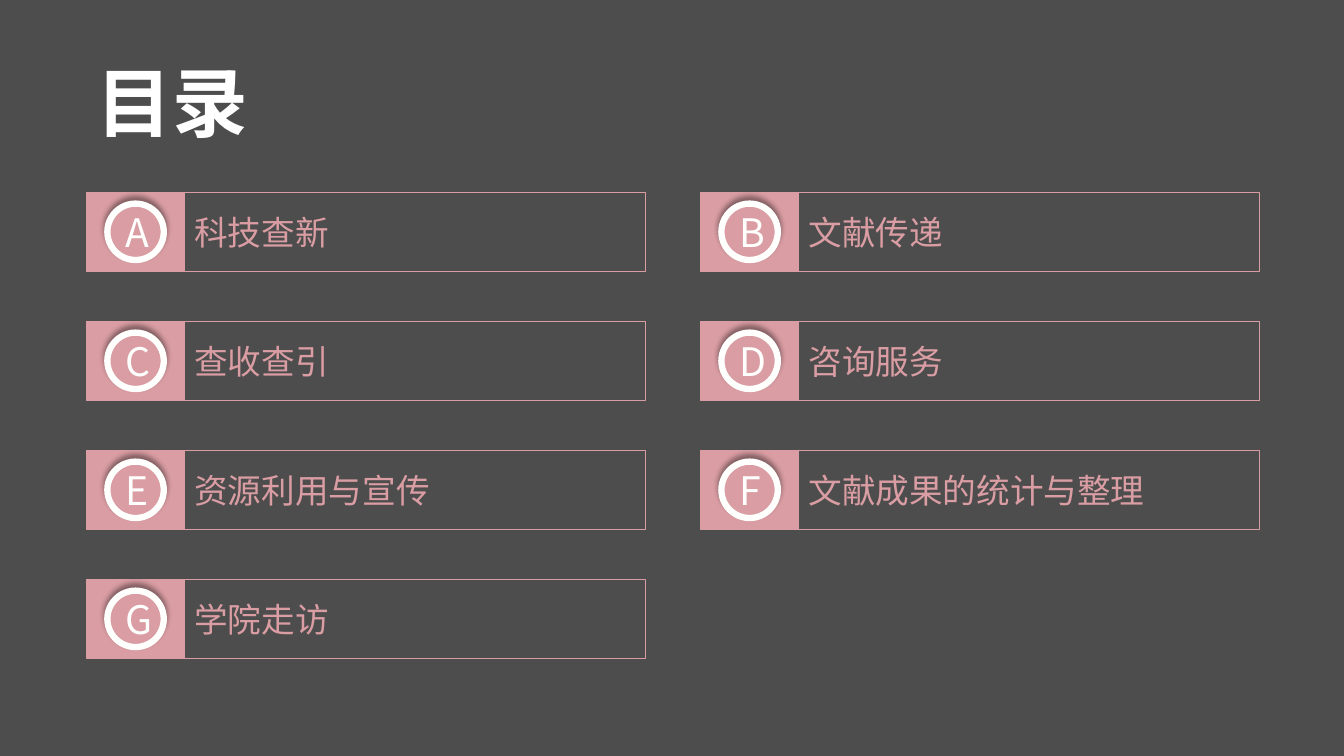
"""Build a contents slide with lettered entries on a two-column grid."""
from dataclasses import dataclass

from lxml import etree
from pptx import Presentation
from pptx.dml.color import RGBColor
from pptx.enum.shapes import MSO_SHAPE
from pptx.enum.text import MSO_ANCHOR, MSO_AUTO_SIZE, PP_ALIGN
from pptx.oxml.ns import qn
from pptx.util import Inches, Pt

RECTANGLE, OVAL = MSO_SHAPE.RECTANGLE, MSO_SHAPE.OVAL
LEFT, CENTER, JUSTIFY = PP_ALIGN.LEFT, PP_ALIGN.CENTER, PP_ALIGN.JUSTIFY
TOP, MIDDLE = MSO_ANCHOR.TOP, MSO_ANCHOR.MIDDLE
GROW = MSO_AUTO_SIZE.SHAPE_TO_FIT_TEXT


@dataclass(frozen=True)
class Theme:
    """Colours, font and type sizes in points."""
    background: str = "4D4D4D"
    pink: str = "D99DA3"
    ring: str = "FFFFFE"
    title: str = "FFFFFF"
    shadow: str = "000000"
    font: str = "Noto Sans CJK SC"
    title_size: int = 54
    letter_size: int = 28
    entry_size: int = 24
    thin_line: float = 0.5
    ring_line: float = 4.5


@dataclass(frozen=True)
class Grid:
    """Slide and entry measures in inches."""
    width: float = 13.33
    height: float = 7.5
    left: float = 0.86
    top: float = 1.91
    column_step: float = 6.09
    row_step: float = 1.28
    columns: int = 2
    tile: float = 0.97
    label: float = 4.57
    row: float = 0.78
    badge: float = 0.56

    def cell(self, index):
        """Return the left and top of an entry."""
        row, column = divmod(index, self.columns)
        return self.left + column * self.column_step, self.top + row * self.row_step


THEME = Theme()
GRID = Grid()
ENTRIES = ("科技查新", "文献传递", "查收查引", "咨询服务",
           "资源利用与宣传", "文献成果的统计与整理", "学院走访")


def write_text(box, text, *, size, color, bold=False, align=LEFT, anchor=MIDDLE):
    """Write one formatted paragraph into a box."""
    frame = box.text_frame
    frame.word_wrap = True
    frame.vertical_anchor = anchor
    para = frame.paragraphs[0]
    para.alignment = align
    span = para.add_run()
    span.text = text
    span.font.name = THEME.font
    span.font.size = Pt(size)
    span.font.bold = bold
    span.font.color.rgb = RGBColor.from_string(color)
    latin = span.font._element.find(qn("a:latin"))
    east_asian = etree.Element(qn("a:ea"), typeface=THEME.font)
    latin.addnext(east_asian)


def add_box(page, kind, place, *, line, line_width, fill=None):
    """Add a flat preset shape at a place given in inches."""
    box = page.shapes.add_shape(kind, *map(Inches, place))
    box.shadow.inherit = False
    if fill:
        box.fill.solid()
        box.fill.fore_color.rgb = RGBColor.from_string(fill)
    else:
        box.fill.background()
    box.line.color.rgb = RGBColor.from_string(line)
    box.line.width = Pt(line_width)
    return box


def add_upward_shadow(box):
    """Give a shape a soft shadow above it."""
    effects = box._element.spPr.find(qn("a:effectLst"))
    shadow = etree.SubElement(effects, qn("a:outerShdw"), blurRad=str(Pt(4)),
                              dist=str(Pt(3)), dir="16200000", rotWithShape="0")
    color = etree.SubElement(shadow, qn("a:srgbClr"), val=THEME.shadow)
    etree.SubElement(color, qn("a:alpha"), val="40000")


def add_title(page, text):
    """Add the slide title."""
    box = page.shapes.add_textbox(*map(Inches, (GRID.left, 0.51, 3.8, 1.01)))
    write_text(box, text, size=THEME.title_size, color=THEME.title,
               bold=True, align=JUSTIFY, anchor=TOP)
    box.text_frame.auto_size = GROW


def add_entry(page, index, text):
    """Add a tile, its lettered badge and its outlined label."""
    left, top = GRID.cell(index)
    add_box(page, RECTANGLE, (left, top, GRID.tile, GRID.row),
            fill=THEME.pink, line=THEME.pink, line_width=THEME.thin_line)
    badge_left = left + (GRID.tile - GRID.badge) / 2
    badge_top = top + (GRID.row - GRID.badge) / 2
    badge = add_box(page, OVAL, (badge_left, badge_top, GRID.badge, GRID.badge),
                    fill=THEME.pink, line=THEME.ring, line_width=THEME.ring_line)
    add_upward_shadow(badge)
    write_text(badge, "ABCDEFG"[index], size=THEME.letter_size,
               color=THEME.ring, align=CENTER)
    label = add_box(page, RECTANGLE, (left + GRID.tile, top, GRID.label, GRID.row),
                    line=THEME.pink, line_width=THEME.thin_line)
    write_text(label, text, size=THEME.entry_size, color=THEME.pink)


def main():
    """Build and save the deck."""
    deck = Presentation()
    deck.slide_width, deck.slide_height = Inches(GRID.width), Inches(GRID.height)
    page = deck.slides.add_slide(deck.slide_layouts[6])
    page.background.fill.solid()
    page.background.fill.fore_color.rgb = RGBColor.from_string(THEME.background)
    add_title(page, "目录")
    for index, text in enumerate(ENTRIES):
        add_entry(page, index, text)
    deck.save("out.pptx")


if __name__ == "__main__":
    main()
